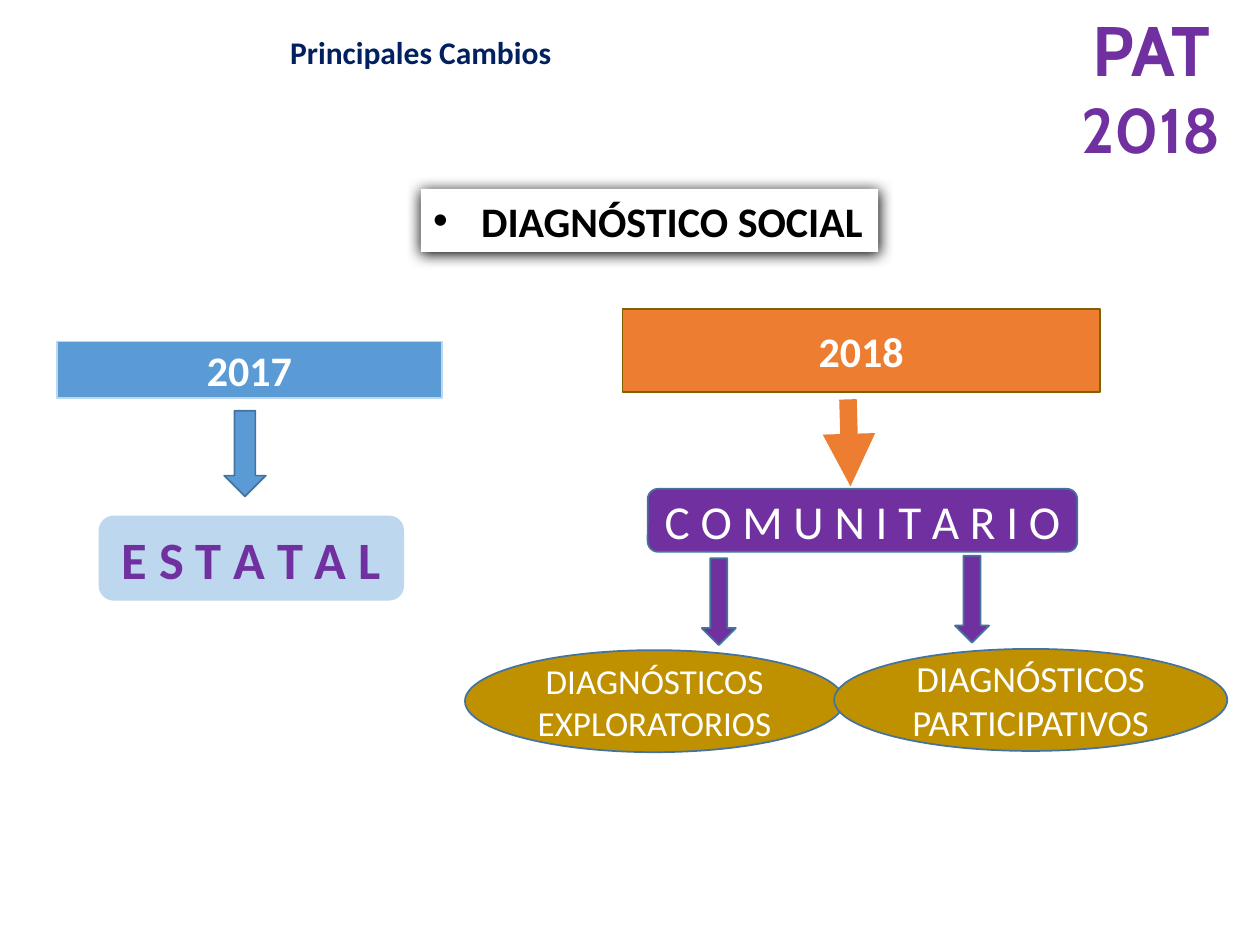
"""Builds the slide that compares the 2017 and 2018 social diagnosis."""
from dataclasses import dataclass
from typing import Optional

from lxml.etree import SubElement
from pptx import Presentation
from pptx.dml.color import RGBColor
from pptx.enum.shapes import MSO_CONNECTOR, MSO_SHAPE
from pptx.enum.text import MSO_ANCHOR, PP_ALIGN
from pptx.oxml import parse_xml
from pptx.oxml.ns import nsdecls, qn
from pptx.util import Emu, Pt

PX = 9144
WHITE = RGBColor(0xFF, 0xFF, 0xFF)
BLACK = RGBColor(0x00, 0x00, 0x00)
NAVY = RGBColor(0x00, 0x20, 0x60)
PURPLE = RGBColor(0x70, 0x30, 0xA0)
BLUE = RGBColor(0x5B, 0x9B, 0xD5)
PALE_BLUE = RGBColor(0xBD, 0xD7, 0xEE)
DARK_BLUE = RGBColor(0x43, 0x73, 0x9E)
ORANGE = RGBColor(0xED, 0x7D, 0x31)
BROWN = RGBColor(0x80, 0x60, 0x00)
GOLD = RGBColor(0xBF, 0x90, 0x00)


@dataclass(frozen=True)
class Box:
    kind: MSO_SHAPE
    left: int
    top: int
    width: int
    height: int
    fill: RGBColor
    line: Optional[RGBColor] = DARK_BLUE
    text: str = ""
    size: int = 24
    bold: bool = False
    color: RGBColor = WHITE


BOXES = [
    Box(MSO_SHAPE.ROUNDED_RECTANGLE, 79, 410, 241, 66, PALE_BLUE, PALE_BLUE,
        "E S T A T A L", 30, True, PURPLE),
    Box(MSO_SHAPE.RECTANGLE, 45, 271, 306, 45, BLUE, PALE_BLUE, "2017", bold=True),
    Box(MSO_SHAPE.DOWN_ARROW, 178, 326, 33, 68, BLUE),
    Box(MSO_SHAPE.ROUNDED_RECTANGLE, 514, 388, 341, 50, PURPLE,
        text="C O M U N I T A R I O", size=27),
    Box(MSO_SHAPE.RECTANGLE, 494, 245, 379, 66, ORANGE, BROWN, "2018", bold=True),
    Box(MSO_SHAPE.DOWN_ARROW, 557, 443, 27, 69, PURPLE),
    Box(MSO_SHAPE.DOWN_ARROW, 758, 441, 27, 69, PURPLE),
    Box(MSO_SHAPE.OVAL, 369, 516, 301, 81, GOLD,
        text="DIAGNÓSTICOS EXPLORATORIOS", size=20),
    Box(MSO_SHAPE.OVAL, 662, 515, 312, 81, GOLD,
        text="DIAGNÓSTICOS PARTICIPATIVOS", size=21),
]


def px(*values: int) -> list[Emu]:
    return [Emu(v * PX) for v in values]


def style_run(r, size: int, color: RGBColor, bold: bool, name: str = "Calibri") -> None:
    r.font.size = Pt(size)
    r.font.bold = bold
    r.font.name = name
    r.font.color.rgb = color


def add_box(slide, box: Box):
    sp = slide.shapes.add_shape(box.kind, *px(box.left, box.top, box.width, box.height))
    sp.shadow.inherit = False
    sp.fill.solid()
    sp.fill.fore_color.rgb = box.fill
    if box.line is None:
        sp.line.fill.background()
    else:
        sp.line.color.rgb = box.line
        sp.line.width = Pt(1)
    if box.text:
        tf = sp.text_frame
        tf.word_wrap = True
        tf.vertical_anchor = MSO_ANCHOR.MIDDLE
        tf.margin_left = tf.margin_right = 0
        p = tf.paragraphs[0]
        p.text = box.text
        p.alignment = PP_ALIGN.CENTER
        style_run(p.runs[0], box.size, box.color, box.bold)
    return sp


def add_text(slide, left: int, top: int, width: int, height: int):
    sp = slide.shapes.add_textbox(*px(left, top, width, height))
    sp.text_frame.word_wrap = True
    p = sp.text_frame.paragraphs[0]
    p.alignment = PP_ALIGN.CENTER
    return p


def add_topic(slide) -> None:
    sp = add_box(slide, Box(MSO_SHAPE.RECTANGLE, 334, 150, 363, 50, WHITE, None))
    effects = sp._element.spPr.find(qn("a:effectLst"))
    effects.append(parse_xml(
        f'<a:outerShdw {nsdecls("a")} blurRad="{Pt(8.5)}" dist="{Pt(1)}" dir="5400000" '
        'algn="t" rotWithShape="0"><a:srgbClr val="000000"/></a:outerShdw>'))
    tf = sp.text_frame
    tf.word_wrap = True
    tf.vertical_anchor = MSO_ANCHOR.TOP
    p = tf.paragraphs[0]
    p.text = "DIAGNÓSTICO SOCIAL"
    p.alignment = PP_ALIGN.LEFT
    pPr = p._p.get_or_add_pPr()
    pPr.set("marL", str(38 * PX))
    pPr.set("indent", str(-38 * PX))
    SubElement(pPr, qn("a:buFont"), typeface="Arial")
    SubElement(pPr, qn("a:buChar"), char="•")
    style_run(p.runs[0], 24, BLACK, True)


def add_arrow(slide, x1: int, y1: int, x2: int, y2: int) -> None:
    cx = slide.shapes.add_connector(MSO_CONNECTOR.STRAIGHT, *px(x1, y1, x2, y2))
    cx.line.color.rgb = ORANGE
    cx.line.width = Pt(10)
    SubElement(cx.line._get_or_add_ln(), qn("a:tailEnd"), type="triangle")
    SubElement(cx._element.spPr, qn("a:effectLst"))


def outline_text(r) -> None:
    r._r.get_or_add_rPr().insert(0, parse_xml(
        f'<a:ln {nsdecls("a")} w="{Pt(0.75)}"><a:solidFill>'
        f'<a:srgbClr val="{WHITE}"/></a:solidFill></a:ln>'))


def main() -> None:
    prs = Presentation()
    prs.slide_width, prs.slide_height = px(1000, 750)
    slide = prs.slides.add_slide(prs.slide_layouts[6])

    p = add_text(slide, 827, 0, 173, 138)
    for text, size in (("PAT", 40), (" 2018", 36)):
        r = p.add_run()
        r.text = text
        style_run(r, size, PURPLE, True, "Cabin")

    add_topic(slide)
    shapes = [add_box(slide, box) for box in BOXES]
    outline_text(shapes[0].text_frame.paragraphs[0].runs[0])
    add_arrow(slide, 673, 317, 675, 386)

    p = add_text(slide, 217, 25, 234, 48)
    p.text = "Principales Cambios"
    p.line_spacing = 0.9
    style_run(p.runs[0], 18, NAVY, True)

    prs.save("out.pptx")


if __name__ == "__main__":
    main()
